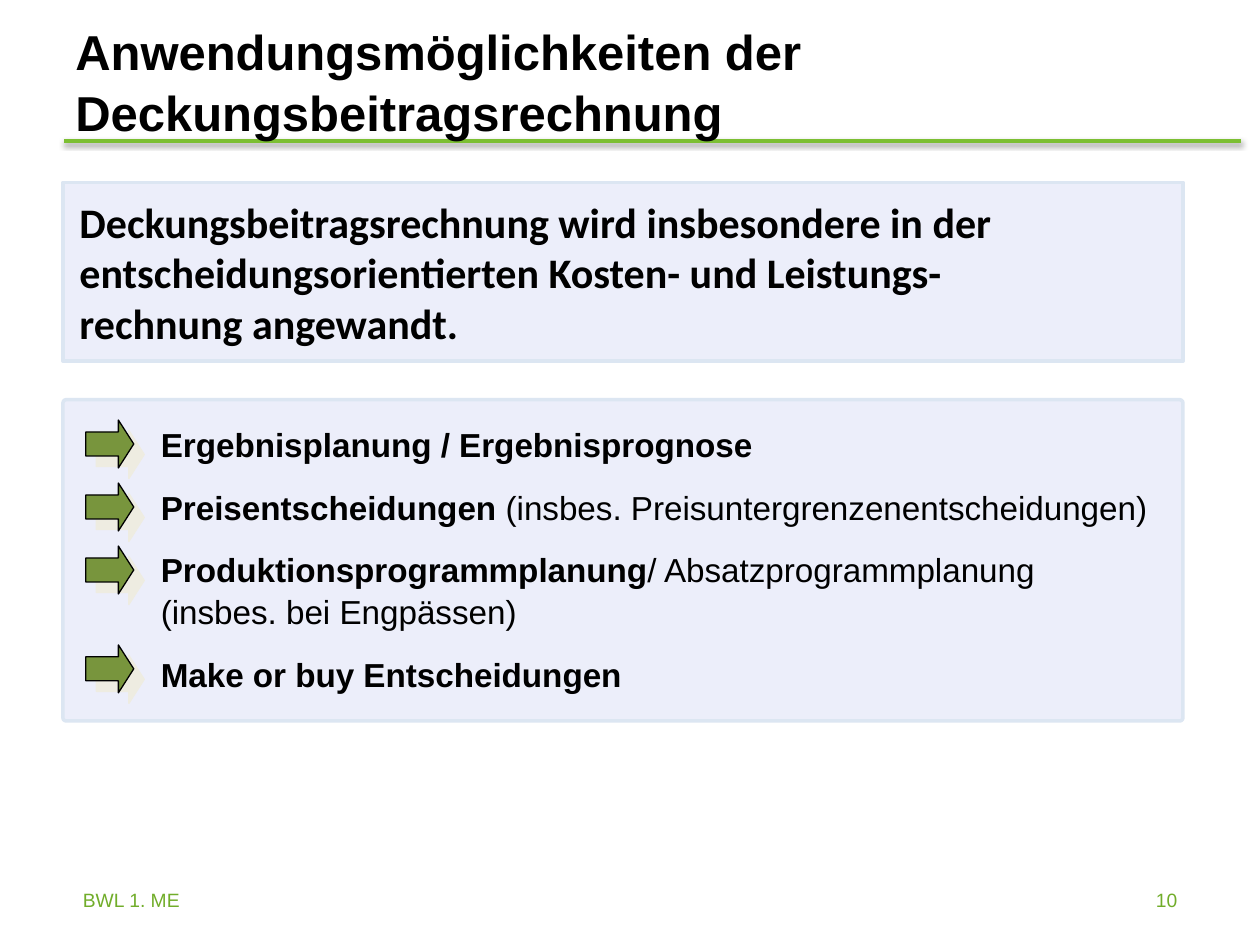
from lxml.etree import SubElement
from pptx import Presentation
from pptx.dml.color import RGBColor
from pptx.enum.shapes import MSO_CONNECTOR, MSO_SHAPE
from pptx.enum.text import MSO_ANCHOR, PP_ALIGN
from pptx.oxml.ns import qn
from pptx.util import Pt

COLORS = {
    "text": "000000", "rule": "7CBF33", "footer": "71AD2A",
    "panel": "ECEEFA", "panel_line": "DCE6F2",
    "arrow": "78953D", "arrow_shadow": "EEECE1",
}
BOLD, REGULAR = True, False

# A paragraph is a list of (text, bold) runs.
TITLE = [[("Anwendungsmöglichkeiten der", BOLD)],
         [("Deckungsbeitragsrechnung", BOLD)]]
STATEMENT = [
    [("Deckungsbeitragsrechnung wird insbesondere in der "
      "entscheidungsorientierten Kosten- und Leistungs-", BOLD)],
    [("rechnung angewandt.", BOLD)],
]
# Each use: top of its arrow, then its paragraphs.
USES = [
    (240, [[("Ergebnisplanung / Ergebnisprognose", BOLD)]]),
    (276, [[("Preisentscheidungen", BOLD),
            (" (insbes. Preisuntergrenzenentscheidungen)", REGULAR)]]),
    (312, [[("Produktionsprogrammplanung", BOLD),
            ("/ Absatzprogrammplanung", REGULAR)],
           [("(insbes. bei Engpässen)", REGULAR)]]),
    (368.5, [[("Make or buy Entscheidungen", BOLD)]]),
]
FOOTER = [[("BWL 1. ME", REGULAR)]]
PAGE_NUMBER = [[("10", REGULAR)]]

PANEL_LEFT, PANEL_WIDTH = 36, 640
ARROW_LEFT, ARROW_SIZE = 49, 27.4
USE_GAP = 12


def color(name):
    return RGBColor.from_string(COLORS[name])


def set_shadow(shape, name, alpha, blur, distance, angle):
    effects = SubElement(shape._element.spPr, qn("a:effectLst"))
    shadow = SubElement(effects, qn("a:outerShdw"), blurRad=str(Pt(blur)),
                        dist=str(Pt(distance)), dir=str(angle * 60000),
                        algn="ctr", rotWithShape="0")
    tint = SubElement(shadow, qn("a:srgbClr"), val=COLORS[name])
    SubElement(tint, qn("a:alpha"), val=str(alpha * 1000))


def add_box(slide, kind, left, top, width, height, fill, line, line_width):
    shape = slide.shapes.add_shape(kind, Pt(left), Pt(top), Pt(width), Pt(height))
    shape.fill.solid()
    shape.fill.fore_color.rgb = color(fill)
    shape.line.color.rgb = color(line)
    shape.line.width = Pt(line_width)
    return shape


def write(frame, paragraphs, size, font="Arial", ink="text", spacing=1.0,
          align=PP_ALIGN.LEFT, gaps=()):
    """Fill a frame; gaps holds the paragraph numbers that get space before."""
    for number, runs in enumerate(paragraphs):
        paragraph = frame.add_paragraph() if number else frame.paragraphs[0]
        paragraph.alignment = align
        paragraph.line_spacing = spacing
        if number in gaps:
            paragraph.space_before = Pt(USE_GAP)
        for text, bold in runs:
            run = paragraph.add_run()
            run.text = text
            run.font.name = font
            run.font.size = Pt(size)
            run.font.bold = bold
            run.font.color.rgb = color(ink)


def add_text(slide, left, top, width, height, wrap=True, anchor=MSO_ANCHOR.TOP):
    frame = slide.shapes.add_textbox(Pt(left), Pt(top), Pt(width), Pt(height)).text_frame
    frame.word_wrap = wrap
    frame.vertical_anchor = anchor
    return frame


def main():
    presentation = Presentation()
    presentation.slide_width, presentation.slide_height = Pt(720), Pt(540)
    slide = presentation.slides.add_slide(presentation.slide_layouts[6])

    rule = slide.shapes.add_connector(MSO_CONNECTOR.STRAIGHT,
                                      Pt(36.6), Pt(80.6), Pt(709.4), Pt(80.6))
    rule.line.color.rgb = color("rule")
    rule.line.width = Pt(2)
    set_shadow(rule, "text", 38, 3.1, 1.6, 90)

    uses_panel = add_box(slide, MSO_SHAPE.ROUNDED_RECTANGLE, PANEL_LEFT, 228.4,
                         PANEL_WIDTH, 183.6, "panel", "panel_line", 2)
    uses_panel.adjustments[0] = 0.01
    uses_panel.shadow.inherit = False

    statement = add_box(slide, MSO_SHAPE.RECTANGLE, PANEL_LEFT, 104.2,
                        PANEL_WIDTH, 102.2, "panel", "panel_line", 2)
    statement.shadow.inherit = False
    frame = statement.text_frame
    frame.word_wrap = True
    frame.margin_left = frame.margin_right = Pt(9.4)
    frame.margin_top = frame.margin_bottom = Pt(6.5)
    write(frame, STATEMENT, 24, font="Calibri")

    paragraphs, gaps = [], []
    for arrow_top, use in USES:
        if paragraphs:
            gaps.append(len(paragraphs))
        paragraphs += use
        arrow = add_box(slide, MSO_SHAPE.RIGHT_ARROW, ARROW_LEFT, arrow_top,
                        ARROW_SIZE, ARROW_SIZE, "arrow", "text", 0.75)
        arrow.adjustments[0], arrow.adjustments[1] = 0.5, 0.32
        set_shadow(arrow, "arrow_shadow", 100, 0, 8.5, 45)
    write(add_text(slide, 84.8, 237.6, 586, 160, wrap=False),
          paragraphs, 19, spacing=1.05, gaps=gaps)

    write(add_text(slide, PANEL_LEFT, 21.6, 633.6, 48.2, anchor=MSO_ANCHOR.MIDDLE),
          TITLE, 28, spacing=1.05)
    write(add_text(slide, 530, 504, 149.8, 23.8), PAGE_NUMBER, 11,
          ink="footer", align=PP_ALIGN.RIGHT)
    write(add_text(slide, 40.3, 504, PANEL_WIDTH, 23.8), FOOTER, 11, ink="footer")

    presentation.save("out.pptx")


if __name__ == "__main__":
    main()
